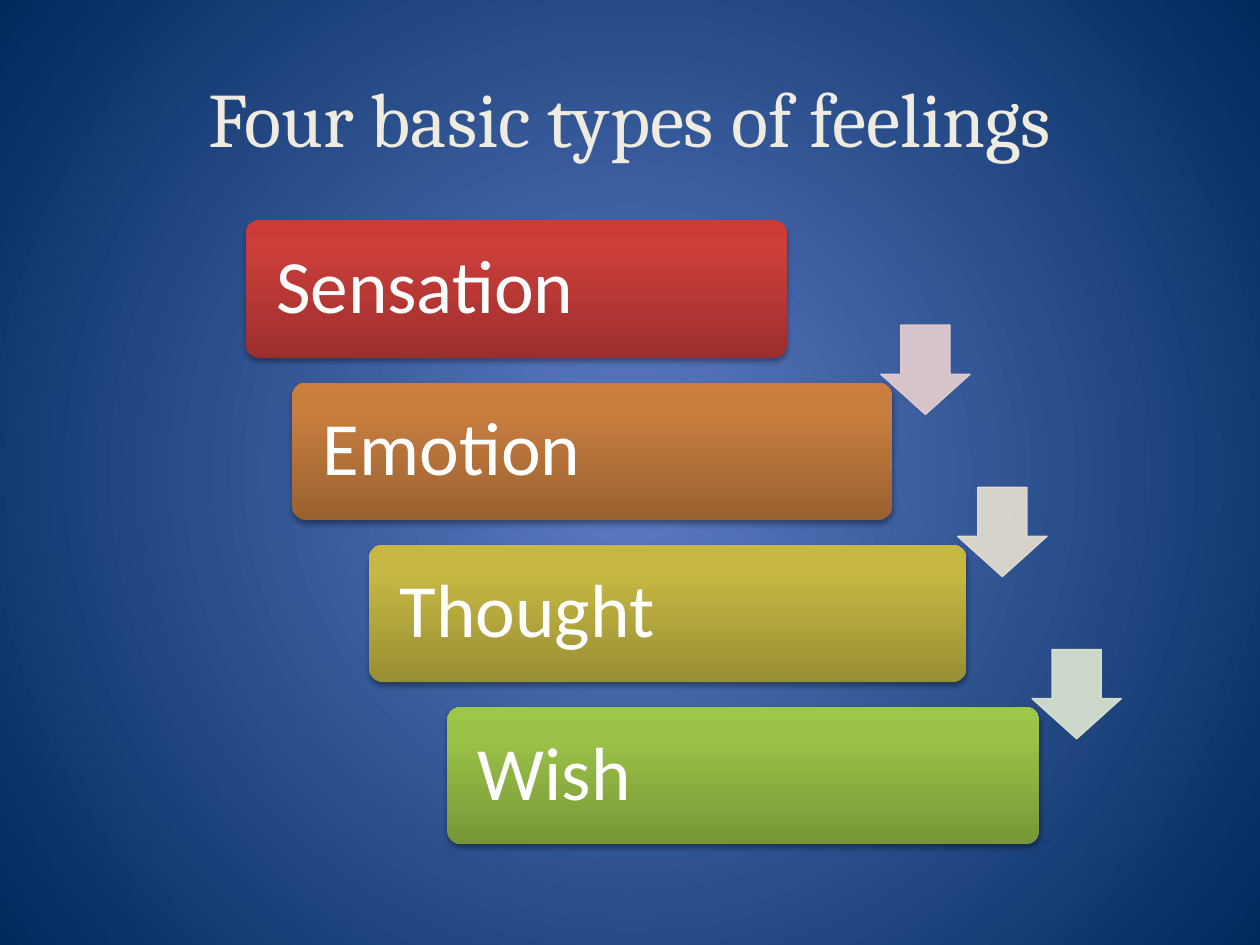
import pptx
import pptx.util
import pptx.dml.color
import pptx.enum.shapes
import pptx.enum.text
import pptx.oxml
import pptx.oxml.ns

Inches = pptx.util.Inches
RGB = pptx.dml.color.RGBColor
SHAPE = pptx.enum.shapes.MSO_SHAPE
ALIGN = pptx.enum.text.PP_ALIGN
qn = pptx.oxml.ns.qn
NS = pptx.oxml.ns.nsdecls("a")

CREAM = RGB(0xEE, 0xEC, 0xE1)
WHITE = RGB(0xFF, 0xFF, 0xFF)
GLOW, NAVY = RGB(0x5E, 0x7C, 0xC5), RGB(0x00, 0x29, 0x5C)
ROSE, SAND, MINT = RGB(0xE8, 0xD0, 0xD0), RGB(0xE8, 0xE1, 0xD1), RGB(0xDE, 0xE7, 0xD1)
REDS = RGB(0x9C, 0x2F, 0x2D), RGB(0xCB, 0x3E, 0x3A), RGB(0xCE, 0x3B, 0x37)
ORANGES = RGB(0x9A, 0x61, 0x30), RGB(0xC8, 0x7E, 0x3F), RGB(0xCC, 0x7E, 0x3C)
YELLOWS = RGB(0x98, 0x8E, 0x34), RGB(0xC6, 0xB8, 0x43), RGB(0xC9, 0xBB, 0x41)
GREENS = RGB(0x77, 0x97, 0x37), RGB(0x9B, 0xC3, 0x48), RGB(0x9D, 0xC7, 0x46)


def write(frame, text, font, size, color, align, spacing=1.0, inset=0.1):
    frame.word_wrap = True
    frame.vertical_anchor = pptx.enum.text.MSO_ANCHOR.MIDDLE
    frame.margin_left = frame.margin_right = Inches(inset)
    paragraph = frame.paragraphs[0]
    paragraph.alignment = align
    paragraph.line_spacing = spacing
    run = paragraph.add_run()
    run.text = text
    run.font.name = font
    run.font.size = pptx.util.Pt(size)
    run.font.color.rgb = color


def paint_gradient(fill, properties, stops, direction):
    """Replace the fill with a gradient of (percent, colour) stops."""
    fill.solid()
    marks = "".join(f'<a:gs pos="{percent * 1000}"><a:srgbClr val="{color}"/></a:gs>'
                    for percent, color in stops)
    gradient = pptx.oxml.parse_xml(
        f'<a:gradFill {NS} rotWithShape="1"><a:gsLst>{marks}</a:gsLst>{direction}</a:gradFill>')
    properties.replace(properties.find(qn("a:solidFill")), gradient)


deck = pptx.Presentation()
deck.slide_width, deck.slide_height = Inches(10), Inches(7.5)
slide = deck.slides.add_slide(deck.slide_layouts[5])

# Background: light centre fading to navy
backdrop = slide.background.fill
backdrop.solid()
paint_gradient(backdrop, slide.element.find(".//" + qn("p:bgPr")), [(0, GLOW), (100, NAVY)],
               '<a:path path="circle"><a:fillToRect l="50000" t="50000" r="50000" b="50000"/></a:path>')

# Title
heading = slide.shapes.title
heading.left, heading.top = Inches(0.5), Inches(0.3)
heading.width, heading.height = Inches(9), Inches(1.25)
write(heading.text_frame, "Four basic types of feelings", font="Cambria", size=44,
      color=CREAM, align=ALIGN.CENTER)

# Staircase of feelings: one row each, with its own left edge and width
FIRST_ROW, ROW_PITCH, STEP_HEIGHT = 1.75, 1.287, 1.09
feelings = [
    ("Sensation", 1.95, 4.3, REDS),
    ("Emotion", 2.32, 4.76, ORANGES),
    ("Thought", 2.93, 4.74, YELLOWS),
    ("Wish", 3.55, 4.7, GREENS),
]
for row, (feeling, left, width, shades) in enumerate(feelings):
    step = slide.shapes.add_shape(SHAPE.ROUNDED_RECTANGLE, Inches(left),
                                  Inches(FIRST_ROW + row * ROW_PITCH),
                                  Inches(width), Inches(STEP_HEIGHT))
    step.adjustments[0] = 0.1
    step.line.fill.background()
    paint_gradient(step.fill, step.element.spPr, zip((0, 80, 100), shades),
                   '<a:lin ang="16200000" scaled="0"/>')
    step.shadow.inherit = False
    step.element.spPr.find(qn("a:effectLst")).append(pptx.oxml.parse_xml(
        f'<a:outerShdw {NS} blurRad="39400" dist="22900" dir="5400000" rotWithShape="0">'
        '<a:srgbClr val="000000"><a:alpha val="35000"/></a:srgbClr></a:outerShdw>'))
    write(step.text_frame, feeling, font="Calibri", size=43, color=WHITE,
          align=ALIGN.LEFT, spacing=0.9, inset=0.21)

# Arrows leading from each step to the next
ARROW_SIZE, ARROW_DROP = 0.71, 0.83
for row, (left, tint) in enumerate([(6.99, ROSE), (7.6, SAND), (8.19, MINT)]):
    arrow = slide.shapes.add_shape(SHAPE.DOWN_ARROW, Inches(left),
                                   Inches(FIRST_ROW + ARROW_DROP + row * ROW_PITCH),
                                   Inches(ARROW_SIZE), Inches(ARROW_SIZE))
    arrow.adjustments[0], arrow.adjustments[1] = 0.55, 0.45
    arrow.shadow.inherit = False
    arrow.fill.solid()
    arrow.fill.fore_color.rgb = tint
    arrow.line.color.rgb = tint
    arrow.line.width = pptx.util.Pt(0.75)
    for color in arrow.element.spPr.iter(qn("a:srgbClr")):
        color.append(pptx.oxml.parse_xml(f'<a:alpha {NS} val="90000"/>'))

deck.save("out.pptx")
